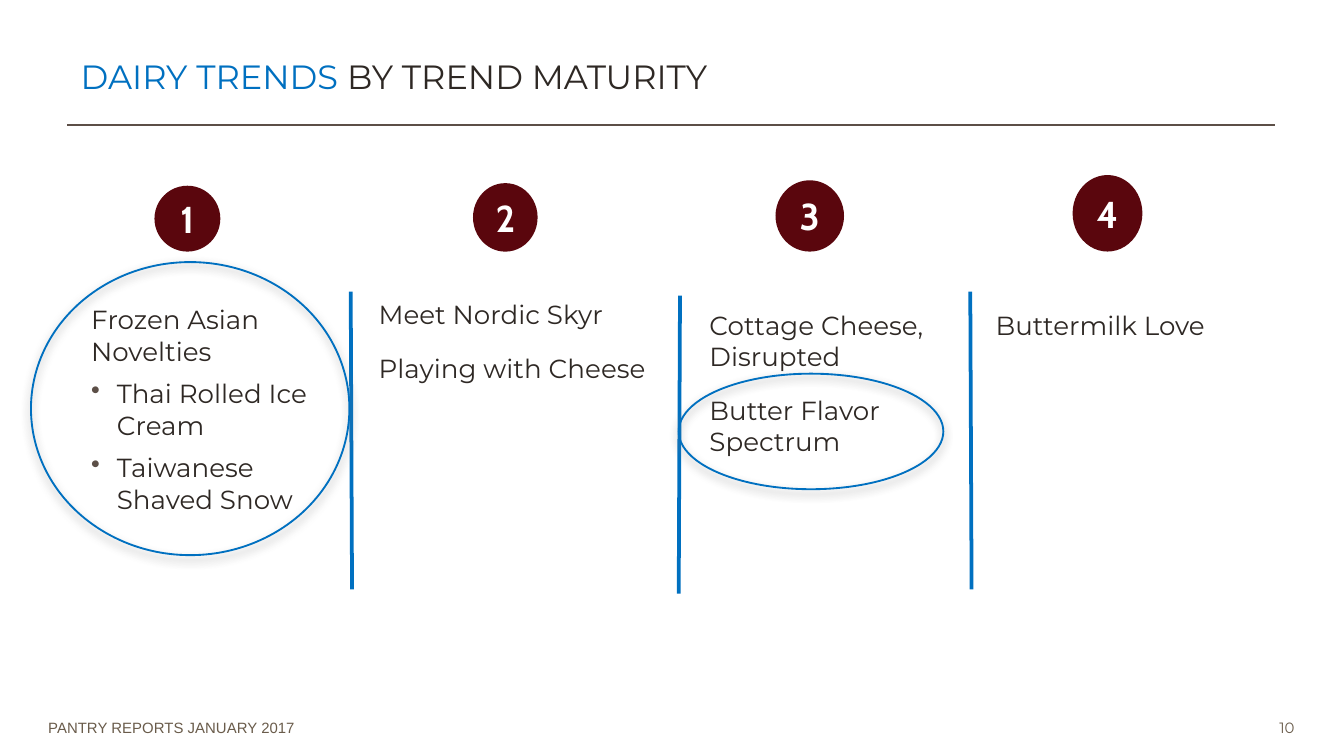
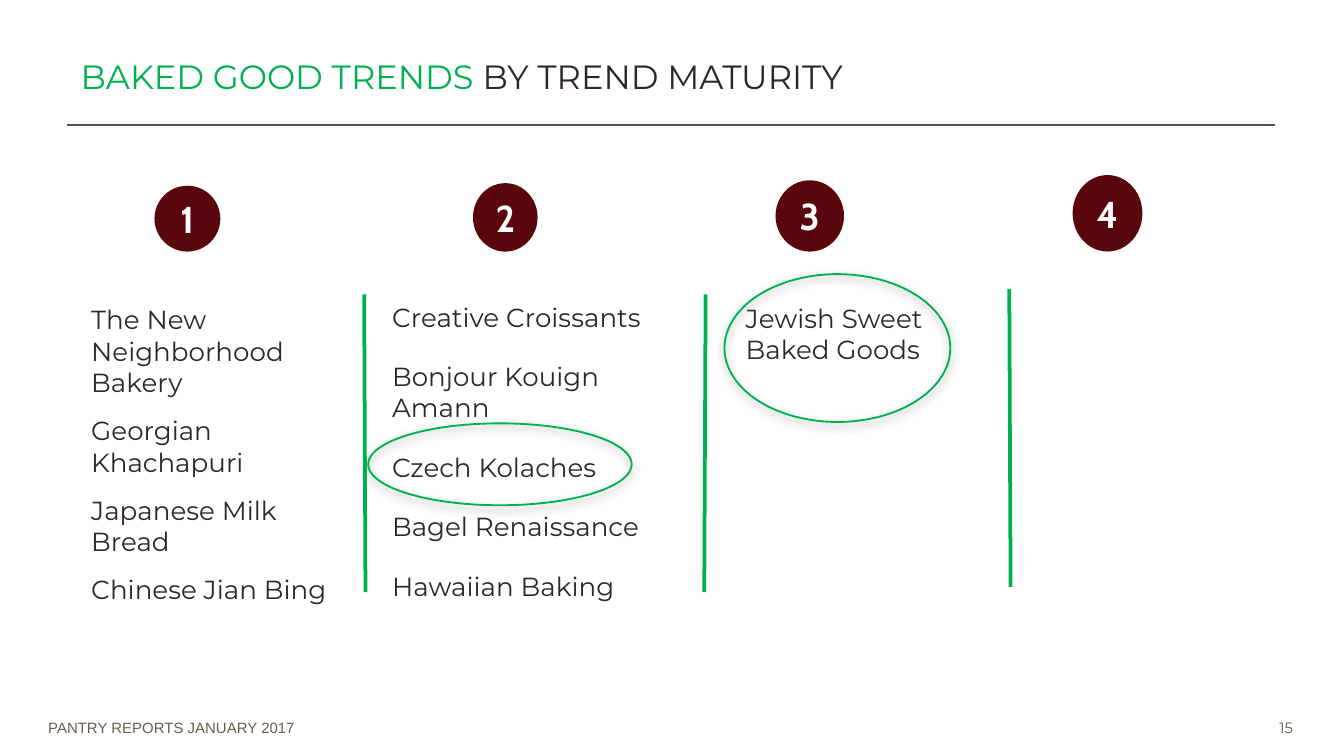
from dataclasses import dataclass

from lxml import etree
from pptx import Presentation
from pptx.dml.color import RGBColor
from pptx.enum.shapes import MSO_CONNECTOR, MSO_SHAPE
from pptx.enum.text import MSO_ANCHOR, PP_ALIGN
from pptx.oxml.ns import qn
from pptx.util import Pt

STRAIGHT = MSO_CONNECTOR.STRAIGHT
OVAL = MSO_SHAPE.OVAL
MIDDLE, BOTTOM = MSO_ANCHOR.MIDDLE, MSO_ANCHOR.BOTTOM
LEFT, CENTER = PP_ALIGN.LEFT, PP_ALIGN.CENTER

COLORS = {
    "background": "FFFFFF",
    "ink": "2E2824",
    "rule": "5C4F47",
    "footer": "6A5C4B",
    "badge": "5A060D",
    "white": "FFFFFF",
    "shadow": "808080",
    "blue": "0070C0",
    "green": "00B050",
}
HEADING_FONT, FOOTER_FONT, BADGE_FONT = "Montserrat", "Arial", "Cabin"
FOOTER_TEXT = "PANTRY REPORTS JANUARY 2017"
BULLET = "• "
BULLET_INDENT = 13.7
BADGES = [(64.4, 35.3, 35.3), (234.7, 34.6, 36.7), (397.8, 36.7, 38.2), (557.3, 37.4, 41)]
BADGE_BOTTOM = 44.8
DIVIDER_HEIGHT = 159.6
DIVIDER_LEANS = (0.7, -0.7, 0.7)


@dataclass
class Box:
    left: float
    top: float
    width: float
    height: float

    def inner(self, left, top, width, height):
        return Box(self.left + left, self.top + top, width, height)

    def lengths(self):
        return Pt(self.left), Pt(self.top), Pt(self.width), Pt(self.height)


@dataclass
class Column:
    box: tuple
    items: list
    space_after: float = 6


@dataclass
class TrendSlide:
    topic: str
    accent: str
    number: str
    space_before: float
    columns: list
    dividers: list
    rings: list


HEADER = Box(36, 22.3, 648, 44.7)
BODY = Box(36, 90, 648, 250)
FOOTER = Box(18.7, 381.6, 685.5, 16.6)

SLIDES = [
    TrendSlide(
        "DAIRY TRENDS ", "blue", "10", 6,
        [
            Column((5.8, 69.1, 151.2, 119.5),
                   ["Frozen Asian Novelties", "• Thai Rolled Ice Cream", "• Taiwanese Shaved Snow"], 0),
            Column((159.8, 66.2, 163.4, 177.8), ["Meet Nordic Skyr", "Playing with Cheese"]),
            Column((337, 72, 141.1, 153.4), ["Cottage Cheese, Disrupted", "Butter Flavor Spectrum"]),
            Column((490.3, 72, 159.1, 175), ["Buttermilk Love"]),
        ],
        [(151.9, 66.2), (328.3, 68.4), (483.8, 66.2)],
        [(-19.4, 50.4, 170.6, 157), (327.6, 110.2, 141.8, 61.9)],
    ),
    TrendSlide(
        "BAKED GOOD TRENDS ", "green", "15", 9,
        [
            Column((5.8, 69.1, 151.2, 119.5),
                   ["The New Neighborhood Bakery", "Georgian Khachapuri",
                    "Japanese Milk Bread", "Chinese Jian Bing"], 0),
            Column((167, 67.7, 163.4, 177.8),
                   ["Creative Croissants", "Bonjour Kouign Amann", "Czech Kolaches",
                    "Bagel Renaissance", "Hawaiian Baking"]),
            Column((356.4, 68.4, 136.1, 175), ["Jewish Sweet Baked Goods"]),
        ],
        [(159.1, 67.7), (342, 67.7), (504.7, 64.8)],
        [(352.1, 56.9, 121, 79.2), (161.3, 136.8, 141.1, 43.9)],
    ),
]


def color(name):
    return RGBColor.from_string(COLORS[name])


def add_run(paragraph, text, size, font, color_name, bold=False):
    run = paragraph.add_run()
    run.text = text
    run.font.size = Pt(size)
    run.font.name = font
    run.font.bold = bold
    run.font.color.rgb = color(color_name)


def add_text_frame(slide, box, wrap=True):
    frame = slide.shapes.add_textbox(*box.lengths()).text_frame
    frame.word_wrap = wrap
    return frame


def add_line(slide, start, end, color_name, width):
    line = slide.shapes.add_connector(STRAIGHT, *map(Pt, start + end))
    line.line.color.rgb = color(color_name)
    line.line.width = Pt(width)
    etree.SubElement(line._element.spPr, qn("a:effectLst"))


def add_oval(slide, box):
    oval = slide.shapes.add_shape(OVAL, *box.lengths())
    oval.shadow.inherit = False
    return oval


def add_bullet(paragraph):
    properties = paragraph._p.get_or_add_pPr()
    properties.set("marL", str(Pt(BULLET_INDENT)))
    properties.set("indent", str(-Pt(BULLET_INDENT)))
    bullet_color = etree.SubElement(properties, qn("a:buClr"))
    etree.SubElement(bullet_color, qn("a:srgbClr"), val=COLORS["rule"])
    etree.SubElement(properties, qn("a:buChar"), char=BULLET.strip())


def add_soft_shadow(shape):
    effects = shape._element.spPr.find(qn("a:effectLst"))
    shadow = etree.SubElement(effects, qn("a:outerShdw"), blurRad=str(Pt(5)),
                              dist=str(Pt(2)), dir="5400000", rotWithShape="0")
    tint = etree.SubElement(shadow, qn("a:srgbClr"), val=COLORS["shadow"])
    etree.SubElement(tint, qn("a:alpha"), val="75000")


def draw_header(slide, box, topic, accent):
    title = slide.shapes.title
    title.left, title.top, title.width, title.height = box.inner(0, 0, box.width, 33.1).lengths()
    frame = title.text_frame
    frame.word_wrap = True
    frame.vertical_anchor = BOTTOM
    paragraph = frame.paragraphs[0]
    paragraph.alignment = LEFT
    add_run(paragraph, topic, 18, HEADING_FONT, accent)
    add_run(paragraph, "BY TREND MATURITY", 18, HEADING_FONT, "ink")
    bottom = box.top + box.height
    add_line(slide, (box.left, bottom), (box.left + box.width - 0.7, bottom), "rule", 0.75)


def draw_footer(slide, box, number):
    number_frame = add_text_frame(slide, box.inner(box.width - 25.9, 0, 25.9, box.height), wrap=False)
    add_run(number_frame.paragraphs[0], number, 8, HEADING_FONT, "footer")
    source_frame = add_text_frame(slide, box.inner(0, 0, 630, box.height))
    add_run(source_frame.paragraphs[0], FOOTER_TEXT, 8, FOOTER_FONT, "footer")


def draw_badges(slide, box):
    for number, (middle, width, height) in enumerate(BADGES, start=1):
        badge = add_oval(slide, box.inner(middle - width / 2, BADGE_BOTTOM - height, width, height))
        badge.fill.solid()
        badge.fill.fore_color.rgb = color("badge")
        badge.line.fill.background()
        badge.text_frame.vertical_anchor = MIDDLE
        paragraph = badge.text_frame.paragraphs[0]
        paragraph.alignment = CENTER
        add_run(paragraph, str(number), 20, BADGE_FONT, "white", bold=True)


def draw_column(slide, box, column, space_before):
    frame = add_text_frame(slide, box)
    for index, item in enumerate(column.items):
        paragraph = frame.add_paragraph() if index else frame.paragraphs[0]
        paragraph.space_before = Pt(space_before)
        paragraph.space_after = Pt(column.space_after)
        if item.startswith(BULLET):
            add_bullet(paragraph)
        add_run(paragraph, item.removeprefix(BULLET), 14, HEADING_FONT, "ink")


def draw_dividers(slide, box, dividers, accent):
    for (left, top), lean in zip(dividers, DIVIDER_LEANS):
        x, y = box.left + left, box.top + top
        add_line(slide, (x + lean, y + DIVIDER_HEIGHT), (x, y), accent, 2)


def draw_rings(slide, box, rings, accent):
    for ring_box in rings:
        ring = add_oval(slide, box.inner(*ring_box))
        ring.fill.background()
        ring.line.color.rgb = color(accent)
        ring.line.width = Pt(1)
        add_soft_shadow(ring)


def draw_trend_slide(presentation, content):
    slide = presentation.slides.add_slide(presentation.slide_layouts[5])
    slide.background.fill.solid()
    slide.background.fill.fore_color.rgb = color("background")
    draw_footer(slide, FOOTER, content.number)
    draw_header(slide, HEADER, content.topic, content.accent)
    draw_badges(slide, BODY)
    for column in content.columns:
        draw_column(slide, BODY.inner(*column.box), column, content.space_before)
    draw_dividers(slide, BODY, content.dividers, content.accent)
    draw_rings(slide, BODY, content.rings, content.accent)


def main():
    presentation = Presentation()
    presentation.slide_width = Pt(720)
    presentation.slide_height = Pt(405)
    for content in SLIDES:
        draw_trend_slide(presentation, content)
    presentation.save("out.pptx")


if __name__ == "__main__":
    main()
